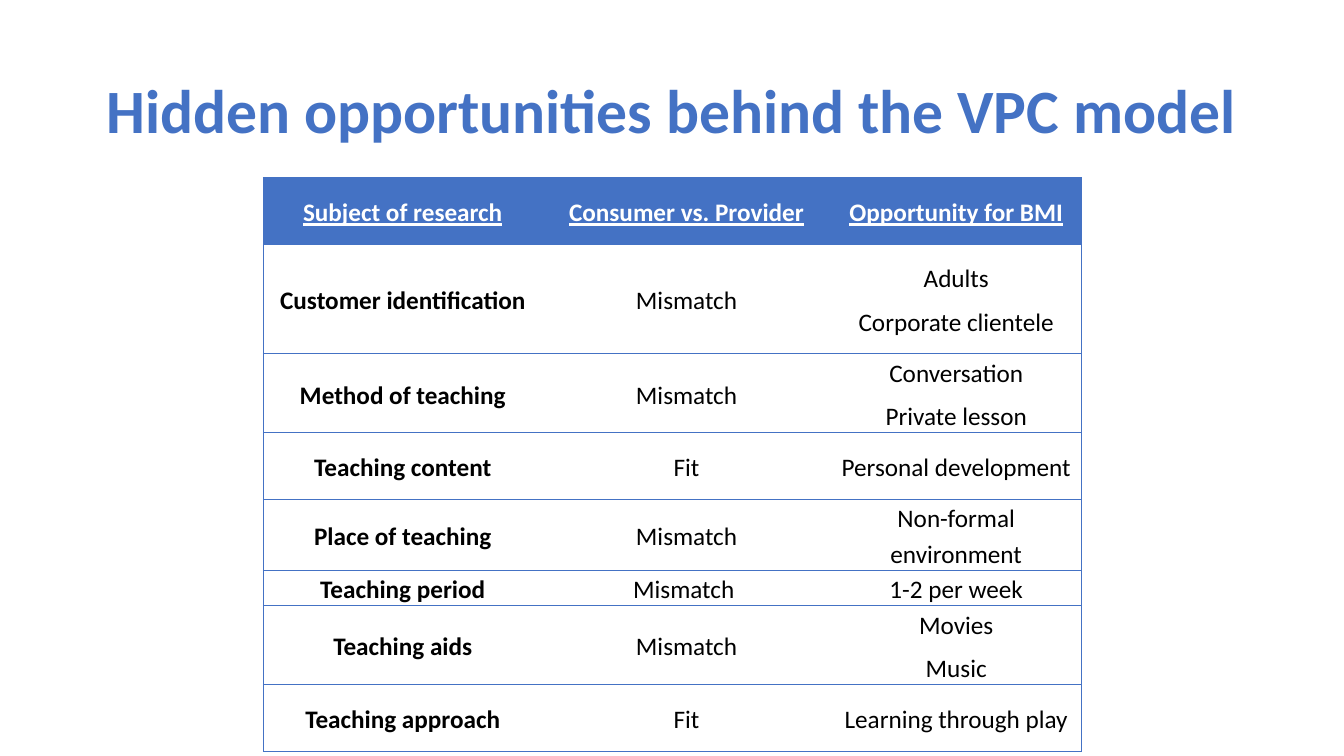
from dataclasses import dataclass
from typing import Any

from lxml import etree
from pptx import Presentation, util as u
from pptx.dml.color import RGBColor
from pptx.enum import text
from pptx.oxml.ns import qn

BLUE = RGBColor(0x44, 0x72, 0xC4)
WHITE = RGBColor(0xFF, 0xFF, 0xFF)
BLACK = RGBColor(0x00, 0x00, 0x00)

SLIDE_WIDTH, SLIDE_HEIGHT = u.Inches(13.333), u.Inches(7.5)
TITLE_ONLY = 5
BORDER_WIDTH = u.Pt(0.5)
COLUMN_SHARES = (20.78, 21.45, 18.68)

TITLE_FONT = {"name": "Calibri", "size": u.Pt(44), "bold": True}
HEADER_FONT = {"name": "Calibri", "size": u.Pt(18), "bold": True, "underline": True}
SUBJECT_FONT = {"name": "Calibri", "size": u.Pt(18), "bold": True}
BODY_FONT = {"name": "Calibri", "size": u.Pt(18), "bold": False}

TITLE_PARAGRAPH = {"alignment": text.PP_ALIGN.CENTER, "line_spacing": 0.9}
CELL_PARAGRAPH = {"alignment": text.PP_ALIGN.CENTER, "line_spacing": 1.15,
                  "space_before": u.Pt(0), "space_after": u.Pt(6)}
CELL_FORMAT = {"vertical_anchor": text.MSO_ANCHOR.MIDDLE,
               "margin_left": u.Inches(0.07), "margin_right": u.Inches(0.07),
               "margin_top": 0, "margin_bottom": 0}


@dataclass(frozen=True)
class Finding:
    """One table row; its height is a percentage of the slide's height."""
    height: float
    subject: str
    comparison: str
    opportunity: str


FINDINGS = (
    Finding(8.8, "Subject of research", "Consumer vs. Provider", "Opportunity for BMI"),
    Finding(14.5, "Customer identification", "Mismatch", "Adults\nCorporate clientele"),
    Finding(9.87, "Method of teaching", "Mismatch", "Conversation\nPrivate lesson"),
    Finding(8.8, "Teaching content", "Fit", "Personal development"),
    Finding(8.8, "Place of teaching", "Mismatch", "Non-formal environment"),
    Finding(4.27, "Teaching period", "Mismatch ", "1-2 per week"),
    Finding(9.87, "Teaching aids", "Mismatch", "Movies\nMusic"),
    Finding(8.8, "Teaching approach", "Fit", "Learning through play"),
)


def across(percent: float) -> int:
    return round(SLIDE_WIDTH * percent / 100)


def down(percent: float) -> int:
    return round(SLIDE_HEIGHT * percent / 100)


def apply_format(target: Any, values: dict[str, Any]) -> None:
    for name, value in values.items():
        setattr(target, name, value)


def write_text(frame: Any, wording: str, paragraph_format: dict[str, Any],
               font_format: dict[str, Any], color: RGBColor) -> None:
    """Write one formatted paragraph for each line of the wording."""
    frame.text = wording
    for paragraph in frame.paragraphs:
        apply_format(paragraph, paragraph_format)
        for run in paragraph.runs:
            apply_format(run.font, font_format)
            run.font.color.rgb = color


def draw_borders(cell: Any, visible_sides: str) -> None:
    """Draw the sides named by L, R, T and B, and clear the others."""
    properties = cell._tc.get_or_add_tcPr()
    for side in "LRTB":
        line = etree.SubElement(properties, qn(f"a:ln{side}"), w=str(BORDER_WIDTH))
        if side in visible_sides:
            fill = etree.SubElement(line, qn("a:solidFill"))
            etree.SubElement(fill, qn("a:srgbClr"), val=str(BLUE))
        else:
            etree.SubElement(line, qn("a:noFill"))


def add_title(slide: Any) -> None:
    title = slide.shapes.title
    apply_format(title, {"left": across(6.88), "top": down(5.33),
                         "width": across(86.25), "height": down(19.33)})
    apply_format(title.text_frame, {"word_wrap": True,
                                    "auto_size": text.MSO_AUTO_SIZE.NONE,
                                    "vertical_anchor": text.MSO_ANCHOR.MIDDLE})
    write_text(title.text_frame, "Hidden opportunities behind the VPC model",
               TITLE_PARAGRAPH, TITLE_FONT, BLUE)


def add_findings_table(slide: Any) -> None:
    table = slide.shapes.add_table(
        len(FINDINGS), len(COLUMN_SHARES), across(19.58), down(23.47),
        across(sum(COLUMN_SHARES)), down(sum(f.height for f in FINDINGS))).table
    table.horz_banding = False
    for column, share in zip(table.columns, COLUMN_SHARES):
        column.width = across(share)
    last_column = len(COLUMN_SHARES) - 1
    for row_index, finding in enumerate(FINDINGS):
        table.rows[row_index].height = down(finding.height)
        is_header = row_index == 0
        wordings = (finding.subject, finding.comparison, finding.opportunity)
        for column_index, wording in enumerate(wordings):
            cell = table.cell(row_index, column_index)
            apply_format(cell, CELL_FORMAT)
            outer_side = {0: "L", last_column: "R"}.get(column_index, "")
            draw_borders(cell, "TB" + outer_side)
            cell.fill.solid()
            cell.fill.fore_color.rgb = BLUE if is_header else WHITE
            body_font = SUBJECT_FONT if column_index == 0 else BODY_FONT
            write_text(cell.text_frame, wording, CELL_PARAGRAPH,
                       HEADER_FONT if is_header else body_font,
                       WHITE if is_header else BLACK)


def main() -> None:
    presentation = Presentation()
    presentation.slide_width = SLIDE_WIDTH
    presentation.slide_height = SLIDE_HEIGHT
    slide = presentation.slides.add_slide(presentation.slide_layouts[TITLE_ONLY])
    add_title(slide)
    add_findings_table(slide)
    presentation.save("out.pptx")


if __name__ == "__main__":
    main()
